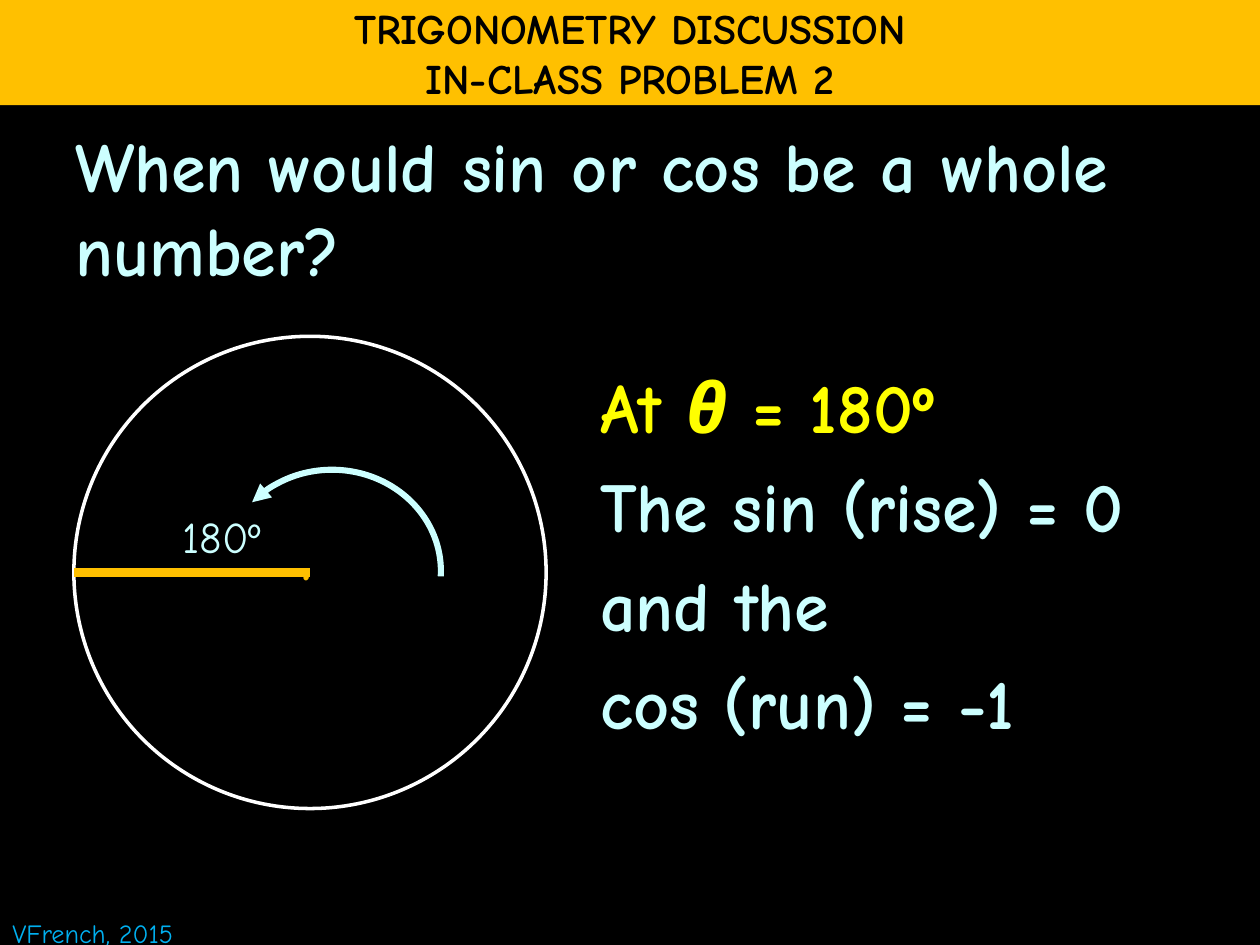
from dataclasses import dataclass

from lxml import etree
from pptx import Presentation
from pptx.dml.color import RGBColor
from pptx.enum.shapes import MSO_CONNECTOR, MSO_SHAPE
from pptx.enum.text import MSO_ANCHOR, MSO_AUTO_SIZE, PP_ALIGN
from pptx.oxml.ns import qn
from pptx.util import Cm, Pt

STRAIGHT = MSO_CONNECTOR.STRAIGHT
RECTANGLE, OVAL, ARC = MSO_SHAPE.RECTANGLE, MSO_SHAPE.OVAL, MSO_SHAPE.ARC
MIDDLE, CENTER = MSO_ANCHOR.MIDDLE, PP_ALIGN.CENTER
FIT_SHAPE = MSO_AUTO_SIZE.SHAPE_TO_FIT_TEXT


@dataclass(frozen=True)
class Theme:
    font: str = "Comic Neue"
    black: str = "000000"
    white: str = "FFFFFF"
    gold: str = "FFC000"
    pale: str = "CCFFFF"
    yellow: str = "FFFF00"
    blue: str = "00B0F0"
    body: int = 40
    label: int = 25
    title: int = 24
    credit: int = 15
    gap: float = 8.5


THEME = Theme()
TITLE = [["TRIGONOMETRY DISCUSSION"], ["IN-CLASS PROBLEM 2"]]
QUESTION = [["When would sin or cos be a whole number?"]]
ANSWER = [["At ", "θ ", "= 180º"], ["The sin (rise) = 0"], ["and the"], ["cos (run) = -1"]]
ITALIC = {"θ "}
CREDIT = [["VFrench, 2015"]]
CENTER_X, CENTER_Y, RADIUS = 6.25, 11.54, 4.76
ARC_BOX = (4.5, 9.47, 4.39, 4.09)
ARC_ANGLES = (132.46, 1.63)


def color(value):
    return RGBColor.from_string(value)


def write(shape, lines, size, colors, bold=False, gap=0, align=None):
    frame = shape.text_frame
    for index, (line, tone) in enumerate(zip(lines, colors)):
        paragraph = frame.paragraphs[0] if index == 0 else frame.add_paragraph()
        paragraph.alignment = align
        paragraph.space_before = Pt(gap)
        font = paragraph.font
        font.name, font.size, font.bold = THEME.font, Pt(size), bold
        font.color.rgb = color(tone)
        for text in line:
            run = paragraph.add_run()
            run.text = text
            if text in ITALIC:
                run.font.italic = True


def add_text(shapes, box, lines, size, colors, wrap=True, fit=False, **style):
    shape = shapes.add_textbox(*map(Cm, box))
    shape.text_frame.word_wrap = wrap
    if fit:
        shape.text_frame.auto_size = FIT_SHAPE
    write(shape, lines, size, colors, **style)


def add_shape(shapes, kind, box, fill=None, line=None, width=0):
    shape = shapes.add_shape(kind, *map(Cm, box))
    shape.shadow.inherit = False
    if fill:
        shape.fill.solid()
        shape.fill.fore_color.rgb = color(fill)
    else:
        shape.fill.background()
    if line:
        shape.line.color.rgb = color(line)
        shape.line.width = Pt(width)
    else:
        shape.line.fill.background()
    return shape


def add_circle(shapes):
    group = shapes.add_group_shape().shapes
    circle = (CENTER_X - RADIUS, CENTER_Y - RADIUS, 2 * RADIUS, 2 * RADIUS)
    add_shape(group, OVAL, circle, line=THEME.white, width=2)
    add_text(group, (5.82, 10.16, 0.86, 1.96), [["."]], THEME.body, [THEME.gold],
             wrap=False, fit=True)
    add_text(group, (3.43, 10.16, 2.82, 1.32), [["180º"]], THEME.label, [THEME.pale], fit=True)
    ends = (CENTER_X - RADIUS, CENTER_Y, CENTER_X, CENTER_Y)
    radius = group.add_connector(STRAIGHT, *map(Cm, ends))
    radius.line.color.rgb = color(THEME.gold)
    radius.line.width = Pt(5)
    etree.SubElement(radius._element.spPr, qn("a:effectLst"))


def add_turn(shapes):
    turn = add_shape(shapes, ARC, ARC_BOX, line=THEME.pale, width=3.5)
    for index, angle in enumerate(ARC_ANGLES):
        turn.adjustments[index] = angle
    etree.SubElement(turn.line._get_or_add_ln(), qn("a:headEnd"), type="triangle")


def main():
    """Build the trigonometry slide and save it."""
    presentation = Presentation()
    presentation.slide_width, presentation.slide_height = Cm(25.4), Cm(19.05)
    slide = presentation.slides.add_slide(presentation.slide_layouts[6])
    slide.background.fill.solid()
    slide.background.fill.fore_color.rgb = color(THEME.black)
    shapes = slide.shapes

    add_text(shapes, (1.27, 2.34, 22.86, 15.67), QUESTION, THEME.body, [THEME.pale],
             bold=True, gap=THEME.gap)
    banner = add_shape(shapes, RECTANGLE, (0, 0, 25.4, 2.12), fill=THEME.gold)
    banner.text_frame.word_wrap = False
    banner.text_frame.vertical_anchor = MIDDLE
    write(banner, TITLE, THEME.title, [THEME.black] * 2, bold=True, align=CENTER)
    add_circle(shapes)
    add_text(shapes, (0, 18.36, 4.29, 0.89), CREDIT, THEME.credit, [THEME.blue],
             wrap=False, fit=True)
    add_text(shapes, (11.85, 7.2, 13.34, 8.05), ANSWER, THEME.body,
             [THEME.yellow] + [THEME.pale] * 3, bold=True, gap=THEME.gap)
    add_turn(shapes)
    presentation.save("out.pptx")


if __name__ == "__main__":
    main()
